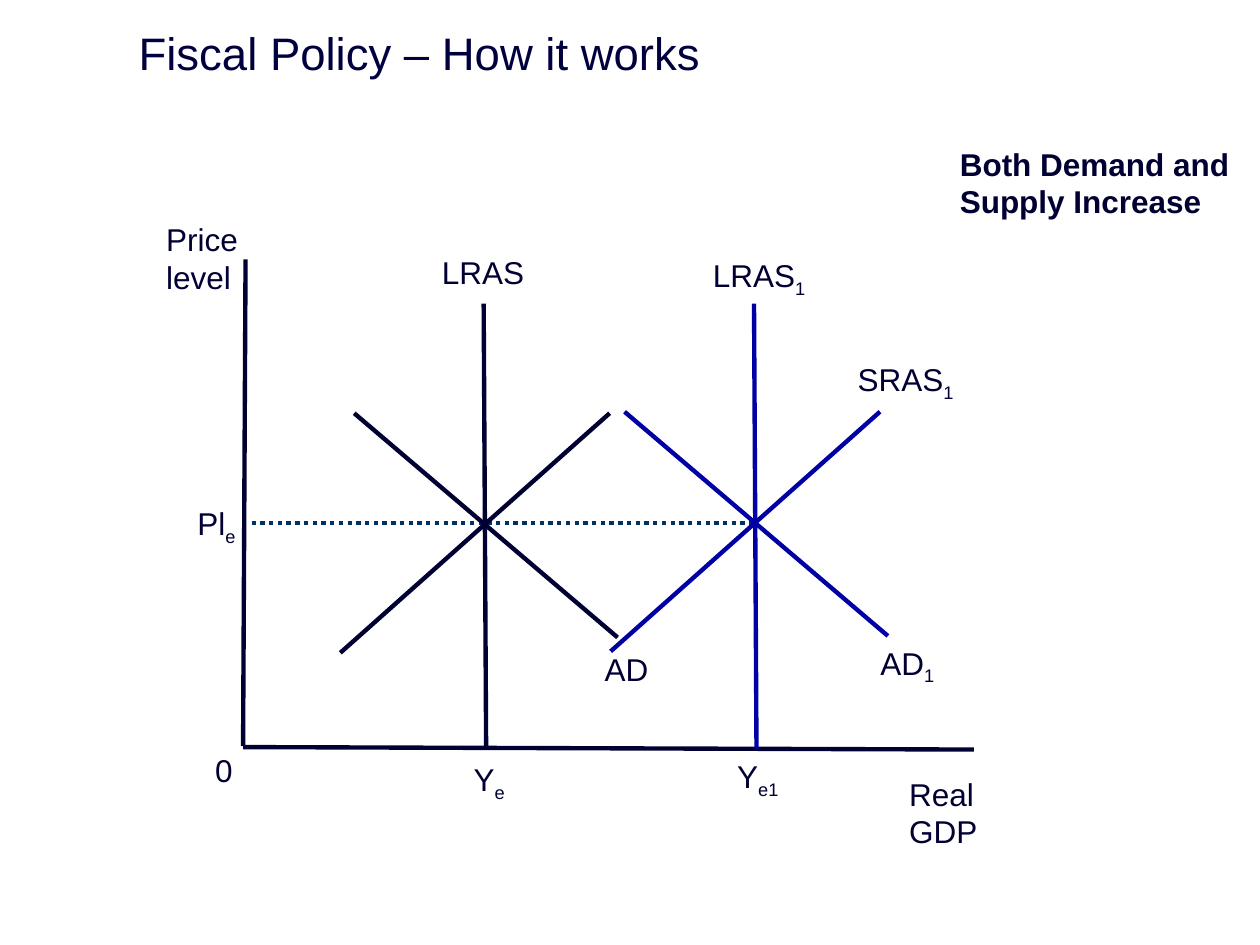
from dataclasses import dataclass

from lxml import etree
from pptx import Presentation
from pptx.dml.color import RGBColor
from pptx.enum.dml import MSO_LINE
from pptx.enum.shapes import MSO_CONNECTOR
from pptx.enum.text import MSO_ANCHOR, MSO_AUTO_SIZE, PP_ALIGN
from pptx.oxml.ns import qn
from pptx.slide import Slide
from pptx.text.text import _Paragraph
from pptx.util import Cm, Pt

STRAIGHT = MSO_CONNECTOR.STRAIGHT
DOTTED = MSO_LINE.ROUND_DOT
MIDDLE = MSO_ANCHOR.MIDDLE
LEFT = PP_ALIGN.LEFT
NO_FIT = MSO_AUTO_SIZE.NONE
GROW = MSO_AUTO_SIZE.SHAPE_TO_FIT_TEXT
TITLE_ONLY = 5


@dataclass(frozen=True)
class Theme:
    font: str = "Arial"
    title_size: int = 26
    label_size: int = 18
    line_width: float = 2.5
    title: str = "00003E"
    ink: str = "000032"
    shifted: str = "0000A5"
    guide: str = "003264"


@dataclass(frozen=True)
class Segment:
    x1: float
    y1: float
    x2: float
    y2: float

    def moved(self, dx: float, dy: float) -> "Segment":
        return Segment(self.x1 + dx, self.y1 + dy, self.x2 + dx, self.y2 + dy)


@dataclass(frozen=True)
class Label:
    left: float
    top: float
    width: float
    text: str
    subscript: str = ""
    bold: bool = False
    height: float = 1.02


THEME = Theme()
AXES = (Segment(4.95, 5.23, 4.9, 15.04), Segment(19.63, 15.11, 4.9, 15.06))
PRICE_GUIDE = Segment(15.19, 10.54, 5.05, 10.54)
SUPPLY = Segment(12.29, 8.33, 6.86, 13.16)
DEMAND = Segment(7.14, 8.33, 12.45, 12.85)
LONG_RUN = Segment(9.75, 6.12, 9.8, 15.11)
SHIFT = 5.45
LIFT = -0.03

LABELS = (
    Label(18.08, 15.49, 3.3, "Real GDP"),
    Label(4.09, 15.01, 1.63, "0"),
    Label(3.1, 4.32, 2.84, "Price level", height=1.8),
    Label(9.3, 15.19, 1.55, "Y", "e"),
    Label(3.73, 10.03, 1.55, "Pl", "e"),
    Label(14.61, 15.14, 1.55, "Y", "e1"),
    Label(11.94, 12.98, 2.06, "AD"),
    Label(8.66, 4.98, 2.74, "LRAS"),
    Label(14.12, 5.03, 2.51, "LRAS", "1"),
    Label(17.04, 7.14, 2.59, "SRAS", "1"),
    Label(17.5, 12.85, 2.06, "AD", "1"),
    Label(19.1, 2.79, 6.55, "Both Demand and Supply Increase", bold=True, height=1.8),
)


def style(para: _Paragraph, size: int, color: str, bold: bool = False) -> None:
    """Set the font of a whole paragraph."""
    para.alignment = LEFT
    para.font.name = THEME.font
    para.font.size = Pt(size)
    para.font.bold = bold
    para.font.color.rgb = RGBColor.from_string(color)


def draw_title(page: Slide, text: str) -> None:
    """Place and format the title placeholder."""
    box = page.shapes.title
    box.left, box.top, box.width, box.height = Cm(2.54), Cm(0.41), Cm(22.86), Cm(1.3)
    frame = box.text_frame
    frame.text = text
    frame.auto_size = NO_FIT
    frame.vertical_anchor = MIDDLE
    style(frame.paragraphs[0], THEME.title_size, THEME.title)


def draw_line(page: Slide, segment: Segment, color: str, dotted: bool = False) -> None:
    """Draw one straight line without a shadow."""
    line = page.shapes.add_connector(
        STRAIGHT, Cm(segment.x1), Cm(segment.y1), Cm(segment.x2), Cm(segment.y2)
    )
    line.line.color.rgb = RGBColor.from_string(color)
    line.line.width = Pt(THEME.line_width)
    if dotted:
        line.line.dash_style = DOTTED
    etree.SubElement(line._element.spPr, qn("a:effectLst"))


def draw_label(page: Slide, label: Label) -> None:
    """Write one label with an optional subscript."""
    box = page.shapes.add_textbox(
        Cm(label.left), Cm(label.top), Cm(label.width), Cm(label.height)
    )
    frame = box.text_frame
    frame.word_wrap = True
    frame.auto_size = GROW
    para = frame.paragraphs[0]
    style(para, THEME.label_size, THEME.ink, label.bold)
    para.add_run().text = label.text
    if label.subscript:
        span = para.add_run()
        span.text = label.subscript
        span._r.get_or_add_rPr().set("baseline", "-25000")


def main() -> None:
    """Build the fiscal policy slide."""
    deck = Presentation()
    deck.slide_width, deck.slide_height = Cm(25.4), Cm(19.05)
    page = deck.slides.add_slide(deck.slide_layouts[TITLE_ONLY])
    draw_title(page, "Fiscal Policy – How it works")
    for axis in AXES:
        draw_line(page, axis, THEME.ink)
    draw_line(page, PRICE_GUIDE, THEME.guide, dotted=True)
    for color, dx, dy in ((THEME.ink, 0, 0), (THEME.shifted, SHIFT, LIFT)):
        draw_line(page, SUPPLY.moved(dx, dy), color)
        draw_line(page, DEMAND.moved(dx, dy), color)
        draw_line(page, LONG_RUN.moved(dx, 0), color)
    for label in LABELS:
        draw_label(page, label)
    deck.save("out.pptx")


if __name__ == "__main__":
    main()
